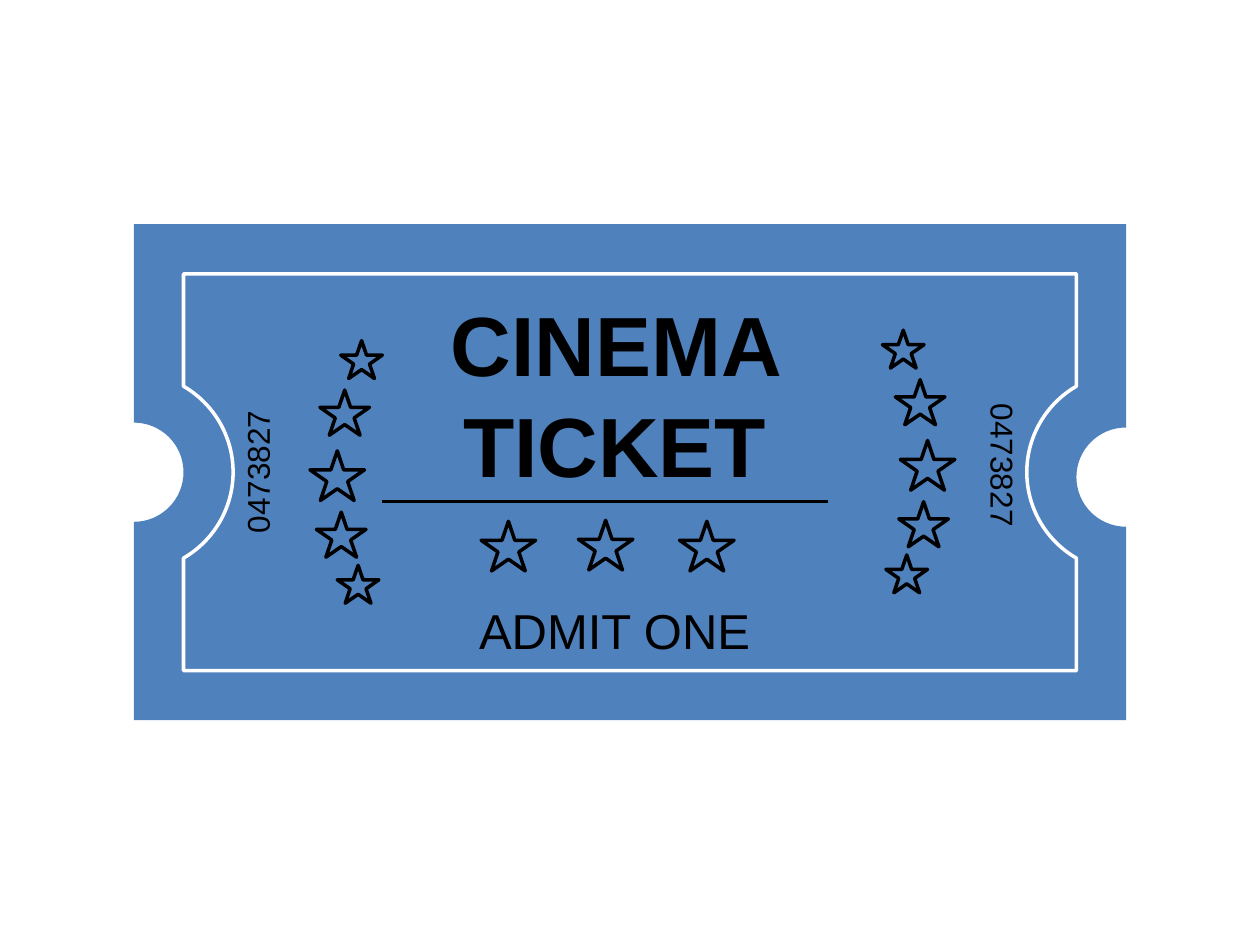
from collections import namedtuple
from math import acos, cos, sin, tan

from lxml.etree import SubElement
from pptx import Presentation
from pptx.dml.color import RGBColor
from pptx.enum.shapes import MSO_CONNECTOR, MSO_SHAPE
from pptx.enum.text import MSO_ANCHOR, PP_ALIGN
from pptx.oxml.ns import qn
from pptx.util import Cm, Pt

BLUE = RGBColor(0x4F, 0x81, 0xBD)
WHITE = RGBColor(0xFF, 0xFF, 0xFF)
BLACK = RGBColor(0x00, 0x00, 0x00)
FONT = "Arial"
SERIAL = "0473827"
STAR_RATIO = 0.91
CURVE_STARTS = (3, 6, 12, 15)
ROW_STARS = [(7.55, 6.49), (9.51, 6.47), (11.55, 6.49)]
COLUMN_STARS = [
    (1.04, 0.38, 0.84),
    (0.70, 1.45, 1.00),
    (0.55, 2.72, 1.10),
    (0.63, 3.91, 1.00),
    (0.97, 4.91, 0.84),
]

Box = namedtuple("Box", "left top width height")


def inner(box, left, top, width, height):
    return Box(box.left + left, box.top + top, width, height)


def notch(centre_x, centre_y, radius, setback, side):
    reach = acos(setback / radius)
    handle = 4 / 3 * tan(reach / 4)

    def at(angle, pull):
        x = cos(angle) + pull * sin(angle)
        y = sin(angle) - pull * cos(angle)
        return centre_x + side * radius * x, centre_y + side * radius * y

    points = [at(reach, 0)]
    for start, end in ((reach, 0), (0, -reach)):
        points += [at(start, handle), at(end, -handle), at(end, 0)]
    return points


def bend_notches(panel):
    steps = list(panel._element.iter(qn("a:lnTo")))
    for start in CURVE_STARTS:
        first, *others = steps[start - 1:start + 2]
        first.tag_name = None
        curve = first.getparent().makeelement(qn("a:cubicBezTo"))
        first.addprevious(curve)
        for step in (first, *others):
            curve.append(step[0])
            step.getparent().remove(step)


def add_notched_panel(page, box, radius, setback=0, right_drop=0, line=None):
    right, bottom = box.left + box.width, box.top + box.height
    middle = box.top + box.height / 2
    points = [
        (box.left, box.top),
        (right, box.top),
        *notch(right + setback, middle + right_drop, radius, setback, -1),
        (right, bottom),
        (box.left, bottom),
        *notch(box.left - setback, middle, radius, setback, 1),
    ]
    vertices = [(Cm(x), Cm(y)) for x, y in points]
    builder = page.shapes.build_freeform(*vertices[0])
    builder.add_line_segments(vertices[1:], close=True)
    panel = builder.convert_to_shape()
    bend_notches(panel)
    panel.shadow.inherit = False
    panel.fill.solid()
    panel.fill.fore_color.rgb = BLUE
    if line is None:
        panel.line.fill.background()
    else:
        panel.line.color.rgb = line
        panel.line.width = Pt(2)


def add_label(page, box, text, size, bold=False, rotation=0):
    label = page.shapes.add_textbox(*map(Cm, box))
    label.rotation = rotation
    frame = label.text_frame
    frame.word_wrap = True
    frame.vertical_anchor = MSO_ANCHOR.MIDDLE
    frame.text = text
    para = frame.paragraphs[0]
    para.alignment = PP_ALIGN.CENTER
    font = para.runs[0].font
    font.name, font.size, font.bold = FONT, Pt(size), bold
    font.color.rgb = BLACK


def add_star(shapes, centre_x, centre_y, width):
    height = width * STAR_RATIO
    box = Box(centre_x - width / 2, centre_y - height / 2, width, height)
    star = shapes.add_shape(MSO_SHAPE.STAR_5_POINT, *map(Cm, box))
    star.shadow.inherit = False
    star.fill.solid()
    star.fill.fore_color.rgb = BLUE
    star.line.color.rgb = BLACK
    star.line.width = Pt(2)


def add_star_column(shapes, outer_x, top, direction):
    for inset, drop, width in COLUMN_STARS:
        add_star(shapes, outer_x + direction * inset, top + drop, width)


def add_rule(page, box):
    y = Cm(box.top)
    rule = page.shapes.add_connector(
        MSO_CONNECTOR.STRAIGHT, Cm(box.left), y, Cm(box.left + box.width), y
    )
    rule.line.color.rgb = BLACK
    rule.line.width = Pt(2.25)
    SubElement(rule._element.spPr, qn("a:effectLst"))


def add_ticket(page, box):
    add_notched_panel(page, box, radius=1, right_drop=0.1)
    frame = inner(box, 1, 1, box.width - 2, box.height - 2)
    add_notched_panel(page, frame, radius=2, setback=1, line=WHITE)

    add_label(page, inner(box, 0.91, 4.48, 3.15, 1.02), SERIAL, 18, rotation=270)
    add_label(page, inner(box, 6.3, 7.45, 6.78, 1.45), "ADMIT ONE", 28)
    add_label(page, inner(box, 15.81, 4.35, 3.43, 1.02), SERIAL, 18, rotation=90)
    add_label(page, inner(box, 5.2, 1.22, 8.99, 4.37), "CINEMA TICKET", 48, bold=True)

    add_rule(page, inner(box, 5, 5.59, 9, 0))
    for x, y in ROW_STARS:
        add_star(page.shapes, box.left + x, box.top + y, 1.1)
    add_star_column(page.shapes, box.left + 16.55, box.top + 2.14, -1)
    column = page.shapes.add_group_shape()
    add_star_column(column.shapes, box.left + 3.55, box.top + 2.35, 1)


def main():
    deck = Presentation()
    deck.slide_width, deck.slide_height = Cm(25.4), Cm(19.05)
    page = deck.slides.add_slide(deck.slide_layouts[6])
    add_ticket(page, Box(2.7, 4.52, 20, 10))
    deck.save("out.pptx")


if __name__ == "__main__":
    main()
